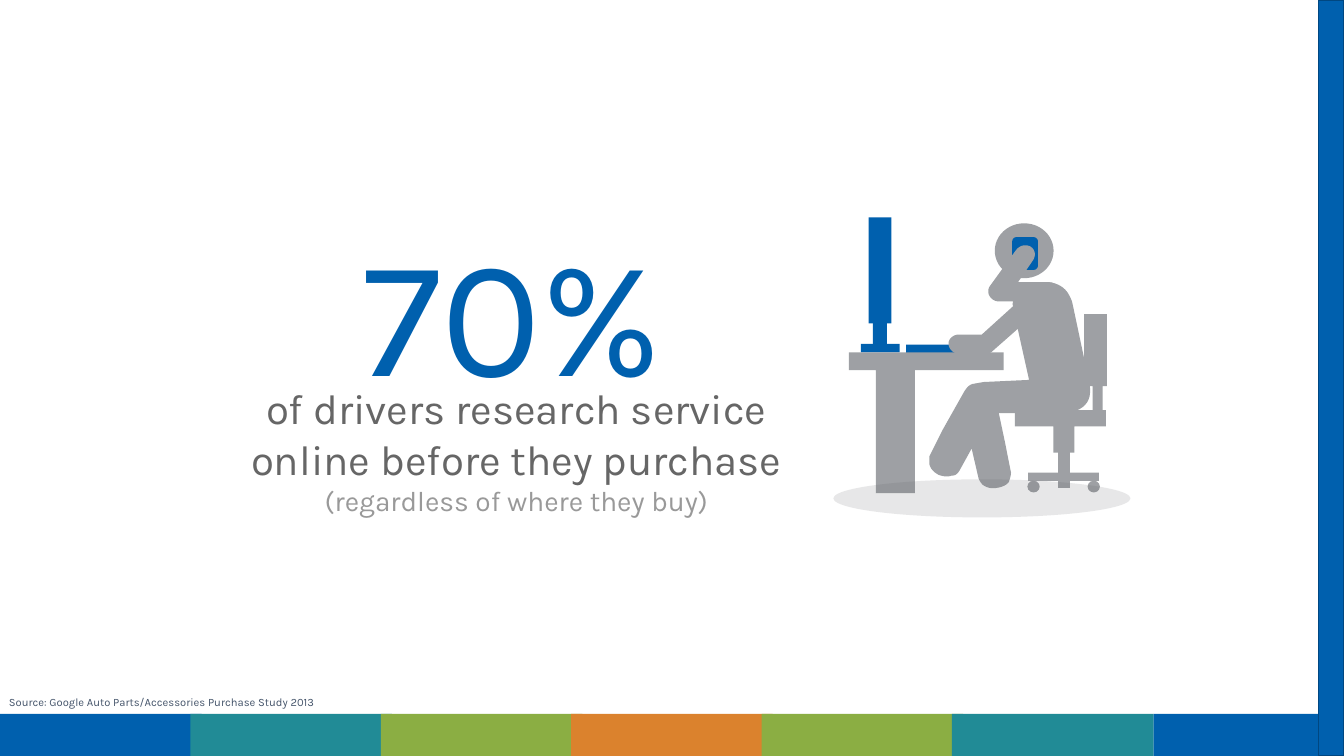
"""Build a slide on how many drivers research car service online."""
from pptx import Presentation
from pptx.dml.color import RGBColor
from pptx.enum.shapes import MSO_SHAPE as Shape
from pptx.enum.text import MSO_AUTO_SIZE as AutoSize, PP_ALIGN as Align
from pptx.oxml.ns import qn
from pptx.util import Pt
from lxml.etree import SubElement

BLUE = RGBColor(0x00, 0x60, 0xAE)
TEAL = RGBColor(0x21, 0x8B, 0x96)
GREEN = RGBColor(0x8B, 0xAE, 0x43)
ORANGE = RGBColor(0xDB, 0x82, 0x2D)
EDGE = RGBColor(0x00, 0x47, 0x81)
GREY = RGBColor(0x9E, 0xA0, 0xA4)
SHADE = RGBColor(0x5F, 0x61, 0x65)
DARK_TEXT = RGBColor(0x66, 0x66, 0x66)
LIGHT_TEXT = RGBColor(0x99, 0x99, 0x99)
SOURCE_TEXT = RGBColor(0x44, 0x54, 0x6A)


def add_solid(shapes, kind, bounds, color):
    solid = shapes.add_shape(kind, *map(Pt, bounds))
    solid.shadow.inherit = False
    solid.fill.solid()
    solid.fill.fore_color.rgb = color
    solid.line.fill.background()
    return solid


def add_outline(shapes, steps, color):
    points = [steps[0]]
    for step in steps[1:]:
        if len(step) == 2:
            points.append(step)
            continue
        x0, y0 = points[-1]
        x1, y1, x2, y2, x3, y3 = step
        for t in (n / 8 for n in range(1, 9)):
            a, b, c, d = (1 - t) ** 3, 3 * t * (1 - t) ** 2, 3 * t * t * (1 - t), t ** 3
            points.append((a * x0 + b * x1 + c * x2 + d * x3,
                           a * y0 + b * y1 + c * y2 + d * y3))
    corners = [(Pt(x), Pt(y)) for x, y in points]
    builder = shapes.build_freeform(*corners[0])
    builder.add_line_segments(corners[1:], close=True)
    outline = builder.convert_to_shape()
    outline.shadow.inherit = False
    outline.fill.solid()
    outline.fill.fore_color.rgb = color
    outline.line.fill.background()


deck = Presentation()
deck.slide_width, deck.slide_height = Pt(960), Pt(540)
page = deck.slides.add_slide(deck.slide_layouts[6])

for index, color in enumerate([BLUE, TEAL, GREEN, ORANGE, GREEN, TEAL]):
    add_solid(page.shapes, Shape.RECTANGLE, (136 * index, 510, 144, 30), color)
add_solid(page.shapes, Shape.RECTANGLE, (824, 510, 136, 30), BLUE)
side_bar = add_solid(page.shapes, Shape.RECTANGLE, (941.8, 0, 18.2, 540), BLUE)
side_bar.line.color.rgb = EDGE
side_bar.line.width = Pt(0.85)

worker = page.shapes.add_group_shape().shapes
for kind, bounds, color in [
    (Shape.RECTANGLE, (647.3, 246.2, 36.7, 6.2), BLUE),
    (Shape.OVAL, (710.6, 159.5, 42, 39.2), GREY),
    (Shape.OVAL, (776.9, 343.4, 8.8, 8.4), GREY),
    (Shape.OVAL, (733.9, 343.4, 8.8, 8.4), GREY),
    (Shape.RECTANGLE, (620.5, 155.3, 16.2, 75.8), BLUE),
    (Shape.RECTANGLE, (623.5, 221, 10.1, 26.7), BLUE),
    (Shape.RECTANGLE, (614.9, 245.7, 27.8, 6), BLUE),
]:
    add_solid(worker, kind, bounds, color)
phone = add_solid(worker, Shape.ROUNDED_RECTANGLE, (723, 169.4, 18.4, 23.4), BLUE)
phone.adjustments[0] = 0.16

body = [
    (663.8, 326.2), (673.2, 307.4), (689, 279.4),
    (690.5, 277.2, 692, 275, 694.8, 274.3), (702.7, 272.9), (735.1, 271.4),
    (723.6, 219.6), (722.9, 213.8, 724.3, 209.5, 729.4, 206.6),
    (733, 204.5, 738.7, 203, 747.4, 201.6),
    (753.1, 201.6, 758.9, 203.8, 762.5, 208.8),
    (763.9, 211, 765.4, 213.8, 766.1, 216.7), (778.3, 274.3),
    (779.8, 283, 777.6, 288.7, 771.1, 292.3),
    (768.2, 293.8, 765.4, 294.5, 762.5, 294.5), (713.5, 295.2),
    (717.8, 315.4), (722.2, 337.7), (722.2, 339.8, 721.4, 342, 720.7, 344.2),
    (719.3, 346.3, 716.4, 347.8, 712.1, 348.5),
    (708.5, 349.2, 704.9, 348.5, 702, 346.3),
    (700.6, 344.9, 699.8, 343.4, 699.1, 342), (694.1, 320.4), (685.4, 336.2),
    (684, 338.4, 682.6, 339.8, 679.7, 339.8),
    (677.5, 340.6, 673.9, 340.6, 670.3, 339.1),
    (666.7, 337, 664.6, 334.8, 663.8, 331.2),
]
desk = [(606.4, 251.8), (716.9, 251.8), (716.9, 264.4), (653.5, 264.4),
        (653.5, 352.2), (625.7, 352.2), (625.7, 264.4), (606.4, 264.4)]
chair = [
    (752.4, 323.3), (752.4, 304.6), (725, 304.6), (725, 293), (780.5, 293),
    (780.5, 275.8), (774.5, 275.8), (774.5, 224.4), (790.6, 224.4),
    (790.6, 275.8), (787.7, 275.8), (787.7, 293), (790, 293), (790, 304.6),
    (767.5, 304.6), (767.5, 323.3), (764.3, 323.3), (764.3, 337.7),
    (785, 337.7), (785, 343.6), (764.3, 343.6), (764.3, 348.5),
    (755.8, 348.5), (755.8, 343.6), (734.4, 343.6), (734.4, 337.7),
    (755.8, 337.7), (755.8, 323.3),
]
raised_arm = [
    (749.5, 215.3), (753.1, 215.3, 756.7, 213.1, 756.7, 208.8),
    (756.7, 205.2, 753.8, 201.6, 749.5, 201.6), (727.2, 201.6), (738, 185.8),
    (740.2, 182.2, 739.4, 178.6, 736.6, 176.4),
    (733, 174.2, 728.6, 175, 725.8, 178.6), (707, 204.5),
    (705.6, 206.6, 705.6, 209.5, 707, 211.7),
    (708.5, 213.8, 710.6, 215.3, 713.5, 215.3),
]
typing_arm = [
    (684.7, 252.7), (704.2, 252.7), (706.3, 252.7, 707.8, 252, 709.2, 250.6),
    (751, 213.8), (753.8, 211, 753.8, 206.6, 751, 203.8),
    (748.1, 201.6, 743.8, 201.6, 740.2, 203.8), (701.3, 239), (684.7, 239),
    (681.1, 239, 677.5, 241.9, 677.5, 245.5),
    (677.5, 249.1, 681.1, 252.7, 684.7, 252.7),
]
for steps in (body, desk, chair, raised_arm, typing_arm):
    add_outline(worker, steps, GREY)

floor = add_solid(worker, Shape.OVAL, (595.3, 342.4, 212.2, 27.2), SHADE)
tint = floor.fill._xPr.find(qn("a:solidFill"))[0]
SubElement(tint, qn("a:alpha"), val="15000")

for bounds, align, lines in [
    ((223.2, 145.4, 285.8, 128.2), Align.CENTER, [("70%", 120, BLUE)]),
    ((148.3, 270, 441.4, 108.7), Align.CENTER, [
        ("of drivers research service online before they purchase", 30, DARK_TEXT),
        ("(regardless of where they buy)", 20, LIGHT_TEXT)]),
    ((-0.7, 493.2, 480.2, 17.3), Align.LEFT, [
        ("Source: Google Auto Parts/Accessories Purchase Study 2013", 8, SOURCE_TEXT)]),
]:
    box = page.shapes.add_textbox(*map(Pt, bounds))
    frame = box.text_frame
    frame.word_wrap = True
    frame.auto_size = AutoSize.NONE
    frame.text = "\n".join(text for text, size, color in lines)
    for para, (text, size, color) in zip(frame.paragraphs, lines):
        para.alignment = align
        para.font.name = "Karla"
        para.font.size = Pt(size)
        para.font.color.rgb = color

deck.save("out.pptx")
